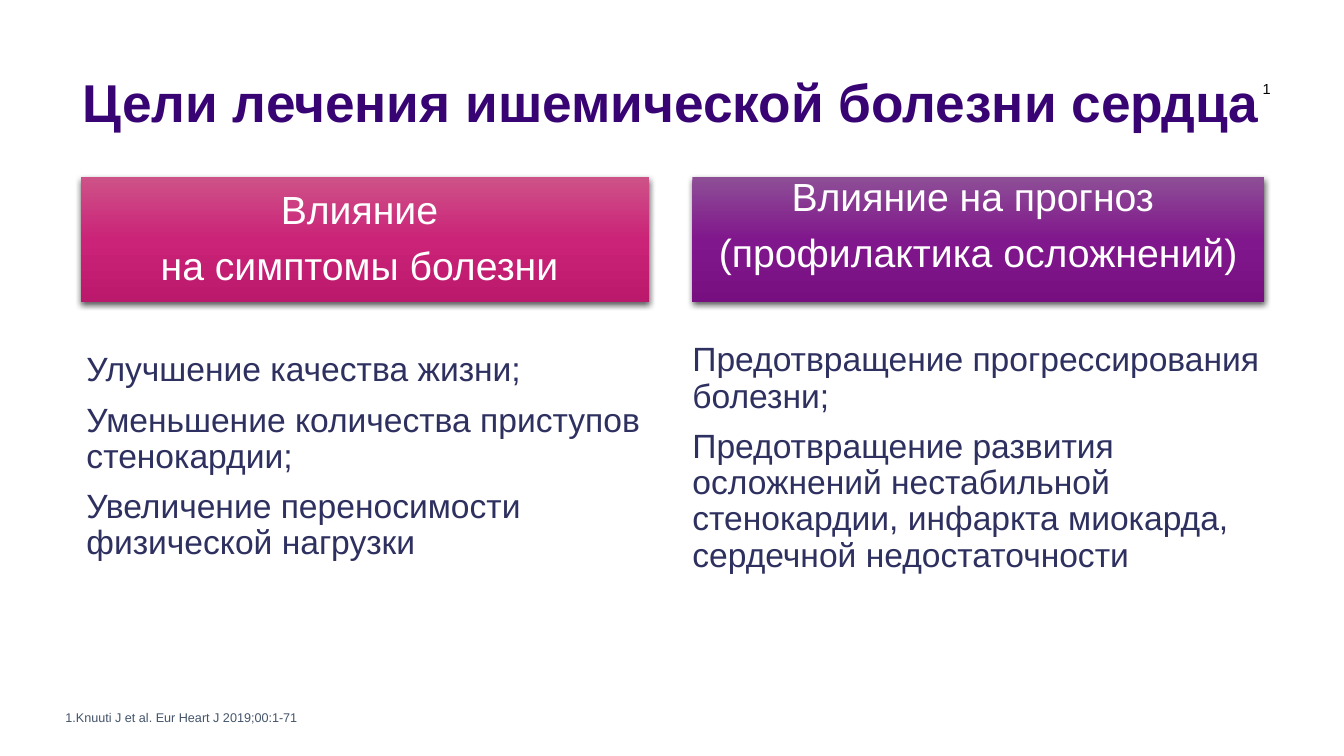
from lxml import etree
from pptx import Presentation
from pptx.dml.color import RGBColor
from pptx.enum.shapes import MSO_SHAPE
from pptx.enum.text import MSO_ANCHOR, PP_ALIGN
from pptx.oxml import parse_xml
from pptx.util import Cm, Pt

RECTANGLE = MSO_SHAPE.RECTANGLE
TOP, MIDDLE = MSO_ANCHOR.TOP, MSO_ANCHOR.MIDDLE
LEFT, CENTER = PP_ALIGN.LEFT, PP_ALIGN.CENTER

VIOLET = RGBColor(0x38, 0x03, 0x73)
NAVY = RGBColor(0x2E, 0x30, 0x5F)
SLATE = RGBColor(0x44, 0x54, 0x6A)
WHITE = RGBColor(0xFF, 0xFF, 0xFF)
BLACK = RGBColor(0x00, 0x00, 0x00)
PINK_STOPS = ("CD5288", "CB2378", "BB196B")
PURPLE_STOPS = ("8D4E96", "81178C", "770F81")

FONT = "Arial"
DRAWING_NS = "http://schemas.openxmlformats.org/drawingml/2006/main"

TITLE = "Цели лечения ишемической болезни сердца"
REFERENCE_MARK = "1"
REFERENCE = "1.Knuuti J et al. Eur Heart J 2019;00:1-71"

# Boxes are (left, top, width, height) in centimetres.
TITLE_BOX = (1.32, 1.32, 31.19, 2.69)
MARK_BOX = (31.57, 1.8, 1.37, 1.02)
REFERENCE_BOX = (1.4, 17.75, 6.5, 0.64)

GOALS = [
    {
        "header": ["Влияние ", "на симптомы болезни "],
        "header_box": (2.03, 4.47, 14.33, 3.15),
        "anchor": MIDDLE,
        "stops": PINK_STOPS,
        "items": [
            "Улучшение качества жизни;",
            "Уменьшение количества приступов стенокардии;",
            "Увеличение переносимости физической нагрузки",
        ],
        "items_box": (2.18, 8.89, 14.02, 8.4),
    },
    {
        "header": ["Влияние на прогноз ", "(профилактика осложнений)"],
        "header_box": (17.45, 4.47, 14.4, 3.15),
        "anchor": TOP,
        "stops": PURPLE_STOPS,
        "items": [
            "Предотвращение прогрессирования болезни;",
            "Предотвращение развития осложнений нестабильной стенокардии, "
            "инфаркта миокарда, сердечной недостаточности",
        ],
        "items_box": (17.45, 8.64, 14.4, 8.6),
    },
]


def write(shape, lines, size, color, align=LEFT, anchor=TOP, bold=False,
          spacing=0.9, inset=(0, 0)):
    """Fill a shape with one paragraph per line; inset is (sides, top and bottom)."""
    frame = shape.text_frame
    frame.word_wrap = True
    frame.vertical_anchor = anchor
    frame.margin_left = frame.margin_right = Cm(inset[0])
    frame.margin_top = frame.margin_bottom = Cm(inset[1])
    for index, line in enumerate(lines):
        paragraph = frame.add_paragraph() if index else frame.paragraphs[0]
        paragraph.alignment = align
        paragraph.line_spacing = spacing
        paragraph.space_before = Pt(10 if index else 0)
        run = paragraph.add_run()
        run.text = line
        run.font.name = FONT
        run.font.size = Pt(size)
        run.font.bold = bold
        run.font.color.rgb = color


def add_text(slide, box, lines, size, color, **options):
    shape = slide.shapes.add_textbox(*map(Cm, box))
    write(shape, lines, size, color, **options)
    return shape


def shade(shape, stops):
    """Give a shape a vertical gradient and a soft shadow below it."""
    shape.fill.gradient()
    gradient = shape.fill._fill._gradFill
    for child in list(gradient):
        gradient.remove(child)
    stop_list = etree.SubElement(gradient, f"{{{DRAWING_NS}}}gsLst")
    for index, color in enumerate(stops):
        stop = etree.SubElement(stop_list, f"{{{DRAWING_NS}}}gs", pos=str(index * 50000))
        etree.SubElement(stop, f"{{{DRAWING_NS}}}srgbClr", val=color)
    etree.SubElement(gradient, f"{{{DRAWING_NS}}}lin", ang="5400000", scaled="0")

    shape.line.fill.background()
    shape.shadow.inherit = False
    effects = shape._element.spPr.find(f"{{{DRAWING_NS}}}effectLst")
    effects.append(parse_xml(
        f'<a:outerShdw xmlns:a="{DRAWING_NS}" blurRad="{Pt(4.5)}" dist="{Pt(1.5)}" '
        'dir="5400000" algn="ctr" rotWithShape="0"><a:srgbClr val="000000">'
        '<a:alpha val="63000"/></a:srgbClr></a:outerShdw>'))


def main():
    presentation = Presentation()
    presentation.slide_width = Cm(33.87)
    presentation.slide_height = Cm(19.05)
    slide = presentation.slides.add_slide(presentation.slide_layouts[6])

    add_text(slide, TITLE_BOX, [TITLE], 38, VIOLET,
             align=CENTER, anchor=MIDDLE, bold=True)

    for goal in GOALS:
        header = slide.shapes.add_shape(RECTANGLE, *map(Cm, goal["header_box"]))
        shade(header, goal["stops"])
        write(header, goal["header"], 28, WHITE, align=CENTER, anchor=goal["anchor"])
        add_text(slide, goal["items_box"], goal["items"], 24, NAVY)

    note_style = {"spacing": 1.0, "inset": (0.25, 0.13)}
    add_text(slide, REFERENCE_BOX, [REFERENCE], 9, SLATE, **note_style)
    mark = add_text(slide, MARK_BOX, [REFERENCE_MARK], 18, BLACK, **note_style)
    mark_run = mark.text_frame.paragraphs[0].runs[0]
    mark_run._r.get_or_add_rPr().set("baseline", "30000")

    presentation.save("out.pptx")


if __name__ == "__main__":
    main()
